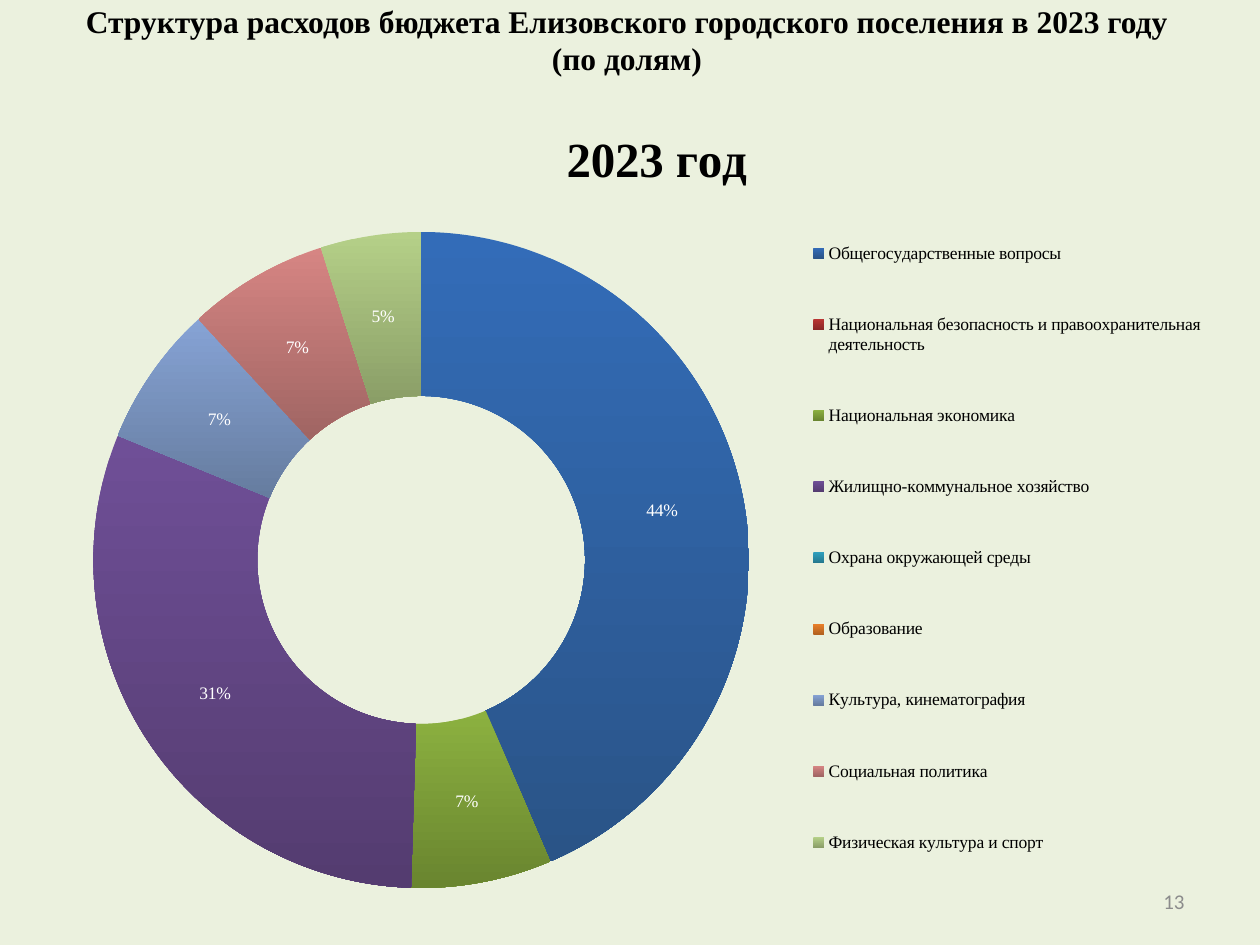
from dataclasses import dataclass

from lxml.etree import SubElement
from pptx import Presentation
from pptx.chart.data import CategoryChartData
from pptx.dml.color import RGBColor
from pptx.enum.chart import XL_CHART_TYPE as ChartType, XL_LEGEND_POSITION as LegendPosition
from pptx.enum.text import MSO_ANCHOR as Anchor, PP_ALIGN as Align
from pptx.oxml.ns import qn
from pptx.util import Emu, Pt

EMU_PER_PX = 914400 / 126
SERIF = "Times New Roman"
YEAR = "2023 год"
PERCENT = "0%"


@dataclass(frozen=True)
class Box:
    left: int
    top: int
    width: int = 0
    height: int = 0


@dataclass(frozen=True)
class Expense:
    name: str
    share: int
    top_color: str
    bottom_color: str


CHART = Box(29, 108, 1181, 798)
RING = Box(93, 232, 657, 656)
LEGEND = Box(815, 192, 395, 712)
CHART_TITLE = Box(558, 119)
ECOLOGY_INDEX = 4
ECOLOGY_LABEL_SHIFT = 17

EXPENSES = [
    Expense("Общегосударственные вопросы", 44, "336CB8", "2A5487"),
    Expense("Национальная безопасность и правоохранительная деятельность", 0, "B93532", "8A2826"),
    Expense("Национальная экономика", 7, "8CB140", "69852F"),
    Expense("Жилищно-коммунальное хозяйство", 31, "6F4F97", "543C70"),
    Expense("Охрана окружающей среды", 0, "2F9FBC", "24788E"),
    Expense("Образование", 0, "EB812A", "B4621F"),
    Expense("Культура, кинематография", 7, "86A3D5", "667C9F"),
    Expense("Социальная политика", 7, "D68583", "A06563"),
    Expense("Физическая культура и спорт", 5, "B5D088", "8A9E67"),
]


def px(length: int) -> Emu:
    return Emu(round(length * EMU_PER_PX))


def rgb(color: str) -> RGBColor:
    return RGBColor.from_string(color)


def bounds(box: Box) -> tuple:
    return px(box.left), px(box.top), px(box.width), px(box.height)


def set_font(font, name: str, size: int, color: str, bold: bool = False) -> None:
    font.name, font.size, font.bold = name, Pt(size), bold
    font.color.rgb = rgb(color)


def write(shape, text: str, align, name: str, size: int, color: str, bold: bool = False) -> None:
    frame = shape.text_frame
    frame.word_wrap = True
    frame.vertical_anchor = Anchor.MIDDLE
    para = frame.paragraphs[0]
    para.text = text
    para.alignment = align
    set_font(para.font, name, size, color, bold)


def set_layout(element, index: int, settings: dict) -> None:
    for old in element.findall(qn("c:layout")):
        element.remove(old)
    layout = SubElement(element, qn("c:layout"))
    element.insert(index, layout)
    manual = SubElement(layout, qn("c:manualLayout"))
    for key, value in settings.items():
        SubElement(manual, qn(f"c:{key}")).set("val", str(value))


def place_in_chart(element, index: int, box: Box, inner: bool = False) -> None:
    settings = {"layoutTarget": "inner"} if inner else {}
    settings |= {
        "xMode": "edge",
        "yMode": "edge",
        "x": round((box.left - CHART.left) / CHART.width, 4),
        "y": round((box.top - CHART.top) / CHART.height, 4),
    }
    if box.width:
        settings |= {
            "w": round(box.width / CHART.width, 4),
            "h": round(box.height / CHART.height, 4),
        }
    set_layout(element, index, settings)


def shift_label(point, distance: int) -> None:
    label = point.data_label
    set_font(label.font, SERIF, 10, "FFFFFF")
    element = label._get_or_add_dLbl()
    element.find(qn("c:showVal")).set("val", "0")
    element.find(qn("c:showPercent")).set("val", "1")
    number_format = SubElement(element, qn("c:numFmt"))
    number_format.set("formatCode", PERCENT)
    number_format.set("sourceLinked", "0")
    element.insert(1, number_format)
    offset = {"x": round(distance / CHART.width, 4), "y": round(distance / CHART.height, 4)}
    set_layout(element, 1, offset)


def paint(point, expense: Expense) -> None:
    fill = point.format.fill
    fill.gradient()
    fill.gradient_angle = 270
    for stop, color in zip(fill.gradient_stops, (expense.top_color, expense.bottom_color)):
        stop.color.rgb = rgb(color)
    point.format.line.fill.background()


def add_expense_chart(page) -> None:
    data = CategoryChartData()
    data.categories = [expense.name for expense in EXPENSES]
    data.add_series(YEAR, [expense.share for expense in EXPENSES])
    chart = page.shapes.add_chart(ChartType.DOUGHNUT, *bounds(CHART), data).chart
    set_font(chart.font, SERIF, 10, "000000")

    chart.has_title = True
    title = chart.chart_title
    para = title.text_frame.paragraphs[0]
    para.text = YEAR
    set_font(para.font, SERIF, 28, "000000", True)
    place_in_chart(title._element, 1, CHART_TITLE)

    chart.has_legend = True
    legend = chart.legend
    legend.position = LegendPosition.RIGHT
    legend.include_in_layout = False
    set_font(legend.font, SERIF, 10, "000000")
    place_in_chart(legend._element, 1, LEGEND)

    place_in_chart(chart._chartSpace.find(f".//{qn('c:plotArea')}"), 0, RING, inner=True)
    plot = chart.plots[0]
    plot.vary_by_categories = True
    series = plot.series[0]
    labels = series.data_labels
    labels.show_percentage = True
    labels.show_value = False
    labels.number_format = PERCENT
    labels.number_format_is_linked = False
    set_font(labels.font, SERIF, 10, "FFFFFF")
    for index, expense in enumerate(EXPENSES):
        paint(series.points[index], expense)
    shift_label(series.points[ECOLOGY_INDEX], ECOLOGY_LABEL_SHIFT)


def main() -> None:
    deck = Presentation()
    deck.slide_width, deck.slide_height = px(1260), px(945)
    page = deck.slides.add_slide(deck.slide_layouts[5])
    page.background.fill.solid()
    page.background.fill.fore_color.rgb = rgb("EBF1DE")

    title = page.shapes.title
    title.left, title.top, title.width, title.height = bounds(Box(39, 20, 1176, 39))
    heading = "Структура расходов бюджета Елизовского городского поселения в 2023 году\v(по долям)"
    write(title, heading, Align.CENTER, SERIF, 18, "000000", True)

    add_expense_chart(page)

    number = page.shapes.add_textbox(*bounds(Box(903, 876, 294, 50)))
    write(number, "13", Align.RIGHT, "Calibri", 12, "8C8C8C")
    deck.save("out.pptx")


if __name__ == "__main__":
    main()
